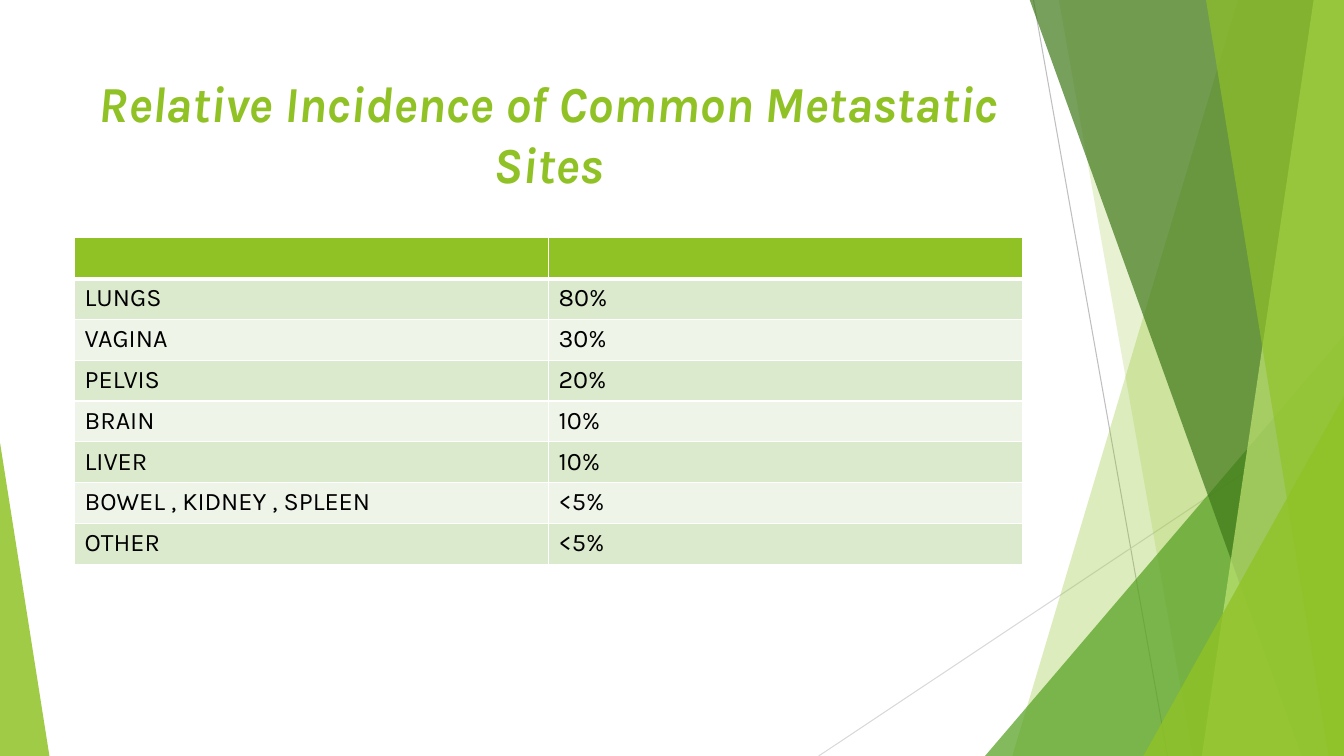
from lxml import etree
from pptx import Presentation
from pptx.dml.color import RGBColor
from pptx.enum import shapes, text
from pptx.oxml import ns
from pptx.util import Inches, Pt

LIME = RGBColor(0x90, 0xC2, 0x26)
PALE_LIME = RGBColor(0xC0, 0xE4, 0x74)
GREEN = RGBColor(0x54, 0xA0, 0x21)
FOREST = RGBColor(0x3F, 0x78, 0x19)
BAND_DARK = RGBColor(0xDB, 0xE9, 0xCD)
BAND_LIGHT = RGBColor(0xEE, 0xF4, 0xE8)
GREY = RGBColor(0xBF, 0xBF, 0xBF)
LIGHT_GREY = RGBColor(0xD9, 0xD9, 0xD9)
WHITE = RGBColor(0xFF, 0xFF, 0xFF)
BLACK = RGBColor(0, 0, 0)
FONT = "Karla"
WIDTH, HEIGHT, TOP = 13.33, 7.5, -0.01

INCIDENCE = [
    ("LUNGS", "80%"),
    ("VAGINA", "30%"),
    ("PELVIS", "20%"),
    ("BRAIN", "10%"),
    ("LIVER", "10%"),
    ("BOWEL , KIDNEY , SPLEEN", "<5%"),
    ("OTHER", "<5%"),
]


def paint(facet, color, opacity):
    facet.shadow.inherit = False
    facet.line.fill.background()
    facet.fill.solid()
    facet.fill.fore_color.rgb = color
    tint = facet.fill._xPr.find(".//" + ns.qn("a:srgbClr"))
    etree.SubElement(tint, ns.qn("a:alpha"), val=str(opacity * 1000))


def add_ray(slide, start, end, color):
    ray = slide.shapes.add_connector(
        shapes.MSO_CONNECTOR.STRAIGHT, *map(Inches, start + end))
    ray.line.color.rgb = color
    ray.line.width = Pt(0.75)
    etree.SubElement(ray._element.spPr, ns.qn("a:effectLst"))


def add_facet(slide, top_x, bottom_x, color, opacity):
    outline = slide.shapes.build_freeform(Inches(top_x), Inches(TOP), scale=1.0)
    corners = [(WIDTH, TOP), (WIDTH, HEIGHT), (bottom_x, HEIGHT)]
    outline.add_line_segments([(Inches(x), Inches(y)) for x, y in corners])
    paint(outline.convert_to_shape(), color, opacity)


def add_triangle(slide, left, top, width, apex, color, opacity):
    triangle = slide.shapes.add_shape(
        shapes.MSO_SHAPE.ISOSCELES_TRIANGLE,
        *map(Inches, (left, top, width, HEIGHT - top)))
    triangle.adjustments[0] = apex
    paint(triangle, color, opacity)


def add_words(paragraph, words, size, color):
    run = paragraph.add_run()
    run.text = words
    run.font.name = FONT
    run.font.size = Pt(size)
    run.font.color.rgb = color
    return run


def add_title(slide, words):
    frame = slide.shapes.add_textbox(
        *map(Inches, (0.74, 0.67, 9.4, 1.44))).text_frame
    frame.word_wrap = True
    frame.vertical_anchor = text.MSO_ANCHOR.TOP
    heading = frame.paragraphs[0]
    heading.alignment = text.PP_ALIGN.CENTER
    run = add_words(heading, words, 36, LIME)
    run.font.bold = True
    run.font.italic = True


def style_cell(cell, color, bottom=1, top=1):
    cell.fill.solid()
    cell.fill.fore_color.rgb = color
    properties = cell._tc.get_or_add_tcPr()
    widths = {"lnL": 1, "lnR": 1, "lnT": top, "lnB": bottom}
    for position, (side, points) in enumerate(widths.items()):
        border = etree.Element(ns.qn("a:" + side), w=str(Pt(points)))
        fill = etree.SubElement(border, ns.qn("a:solidFill"))
        etree.SubElement(fill, ns.qn("a:srgbClr"), val=str(WHITE))
        properties.insert(position, border)


def add_incidence_table(slide, entries):
    table = slide.shapes.add_table(
        len(entries) + 1, 2, *map(Inches, (0.74, 2.36, 9.4, 3.24))).table
    for header in table.rows[0].cells:
        style_cell(header, LIME, bottom=3)
    for number, entry in enumerate(entries, 1):
        band = BAND_DARK if number % 2 else BAND_LIGHT
        for cell, words in zip(table.rows[number].cells, entry):
            style_cell(cell, band, top=3 if number == 1 else 1)
            add_words(cell.text_frame.paragraphs[0], words, 18, BLACK)


def main():
    deck = Presentation()
    deck.slide_width, deck.slide_height = Inches(WIDTH), Inches(HEIGHT)
    slide = deck.slides.add_slide(deck.slide_layouts[6])

    add_ray(slide, (10.25, 0), (11.58, HEIGHT), GREY)
    add_ray(slide, (WIDTH, 4.03), (8.12, HEIGHT), LIGHT_GREY)
    add_facet(slide, 12.28, 10.04, LIME, 30)
    add_facet(slide, 10.5, 11.83, LIME, 20)
    add_triangle(slide, 9.77, 3.33, 3.56, 1, GREEN, 72)
    add_facet(slide, 10.21, 12.91, FOREST, 70)
    add_facet(slide, 13.03, 11.92, PALE_LIME, 70)
    add_facet(slide, 11.96, 13.18, LIME, 65)
    add_triangle(slide, 11.34, 3.93, 1.99, 1, LIME, 80)
    add_triangle(slide, 0, 4.39, 0.49, 0, LIME, 85)

    add_title(slide, "Relative Incidence of Common Metastatic Sites")
    add_incidence_table(slide, INCIDENCE)
    deck.save("out.pptx")


if __name__ == "__main__":
    main()
